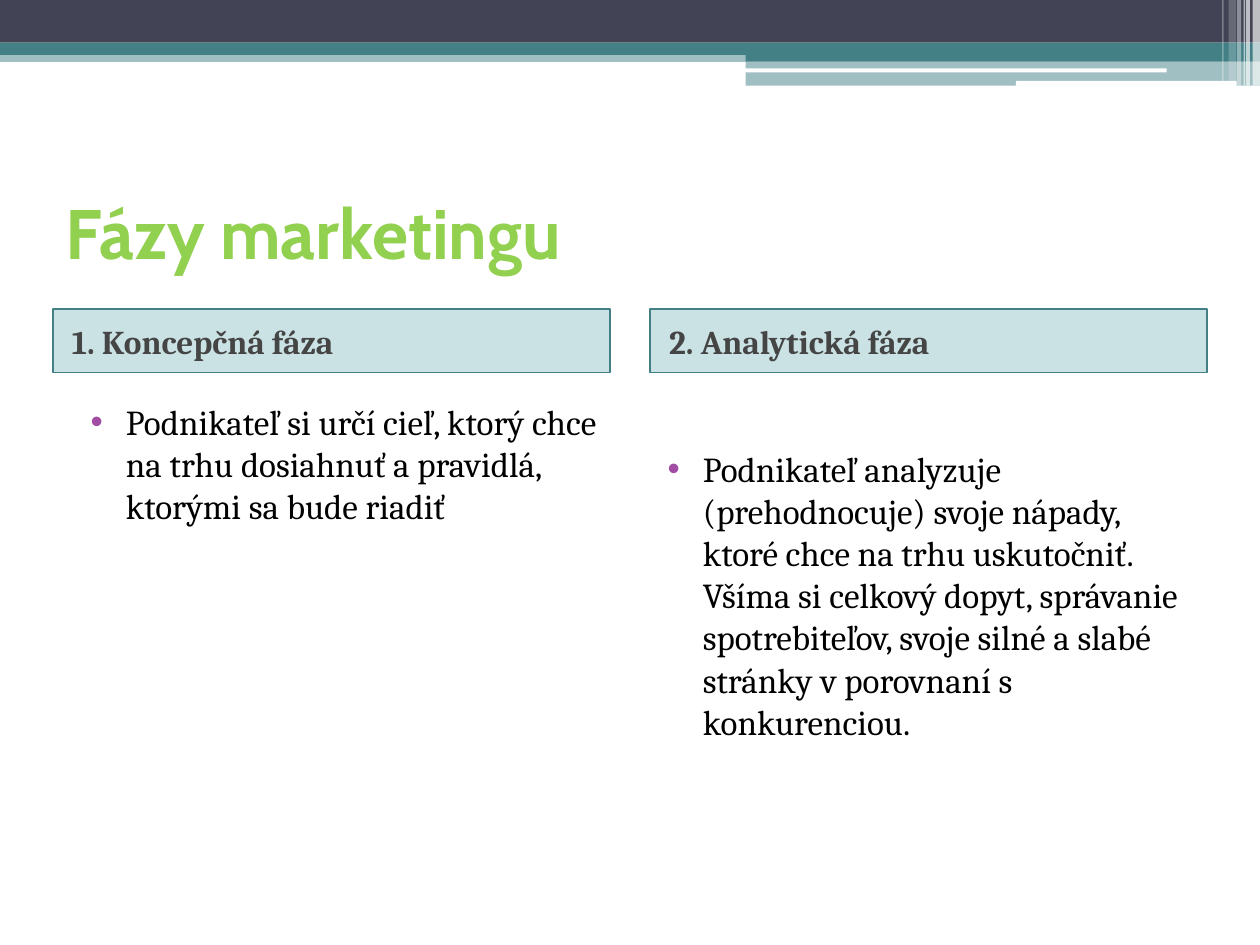
import pptx
import pptx.dml.color
import pptx.enum.shapes
import pptx.enum.text
import pptx.oxml
import pptx.oxml.ns
import pptx.util
from pptx.util import Cm, Pt

COLORS = {
    "navy": "424456", "teal": "438086", "white": "FFFFFF", "green": "92D050",
    "label": "328E97", "label_text": "454545", "black": "000000", "bullet": "A04DA3",
}
SHAPES = pptx.enum.shapes.MSO_SHAPE
ANCHORS = pptx.enum.text.MSO_ANCHOR

deck = pptx.Presentation()
deck.slide_width, deck.slide_height = Cm(25.4), Cm(19.05)
page = deck.slides.add_slide(deck.slide_layouts[6])


def add_block(kind, left, top, width, height, color, opacity=100):
    """Add a filled shape without outline; lengths in cm, opacity in percent."""
    block = page.shapes.add_shape(kind, Cm(left), Cm(top), Cm(width), Cm(height))
    block.shadow.inherit = False
    block.line.fill.background()
    block.fill.solid()
    block.fill.fore_color.rgb = pptx.dml.color.RGBColor.from_string(COLORS[color])
    if opacity < 100:
        fill_color = block.fill._xPr.find(".//" + pptx.oxml.ns.qn("a:srgbClr"))
        alpha = pptx.oxml.parse_xml(
            f'<a:alpha {pptx.oxml.ns.nsdecls("a")} val="{opacity * 1000}"/>')
        fill_color.append(alpha)
    return block


def write_text(box, text, font, size, color, bold=False, anchor=ANCHORS.MIDDLE):
    """Set the only paragraph of a box and return that paragraph."""
    frame = box.text_frame
    frame.text = text
    frame.word_wrap = True
    frame.vertical_anchor = anchor
    para = frame.paragraphs[0]
    para.alignment = pptx.enum.text.PP_ALIGN.LEFT
    span = para.runs[0]
    span.font.name, span.font.size, span.font.bold = font, Pt(size), bold
    span.font.color.rgb = pptx.dml.color.RGBColor.from_string(COLORS[color])
    return para


# Header bands
for left, top, width, height, color, opacity in [
    (0, 1.02, 25.4, 0.23, "teal", 50),
    (0, 0, 25.4, 0.86, "navy", 100),
    (0, 0.86, 25.4, 0.25, "teal", 100),
    (15.03, 0.99, 10.37, 0.24, "teal", 100),
    (15.03, 1.23, 10.37, 0.5, "teal", 50),
]:
    add_block(SHAPES.RECTANGLE, left, top, width, height, color, opacity)

for left, top, width, height in [(15.02, 1.38, 8.5, 0.08), (20.48, 1.63, 4.45, 0.1)]:
    add_block(SHAPES.ROUNDED_RECTANGLE, left, top, width, height, "white")

# Vertical stripes at the right edge
for left, width, height, opacity in [
    (25.25, 0.15, 1.73, 65),
    (25.12, 0.08, 1.73, 65),
    (25.07, 0.03, 1.73, 60),
    (24.94, 0.08, 1.73, 40),
    (24.77, 0.15, 1.63, 20),
    (24.64, 0.03, 1.63, 30),
]:
    add_block(SHAPES.RECTANGLE, left, 0, width, height, "white", opacity)

title = page.shapes.add_textbox(Cm(1.07), Cm(3.18), Cm(23.29), Cm(2.97))
write_text(title, "Fázy marketingu", "Cabin", 40, "green", bold=True)

# Two phases: label and description, with the description's top inset
COLUMN_WIDTH = 11.23
phases = [
    (1.07, "1. Koncepčná fáza", 1.27, 8.76, 2.03,
     "Podnikateľ si určí cieľ, ktorý chce na trhu dosiahnuť a pravidlá, "
     "ktorými sa bude riadiť"),
    (13.11, "2. Analytická fáza", 12.9, 10.9, 2.98,
     "Podnikateľ analyzuje (prehodnocuje) svoje nápady, ktoré chce na trhu "
     "uskutočniť. Všíma si celkový dopyt, správanie spotrebiteľov, svoje silné "
     "a slabé stránky v porovnaní s konkurenciou."),
]
for label_left, heading, body_left, body_height, inset, description in phases:
    label = add_block(SHAPES.RECTANGLE, label_left, 6.23, COLUMN_WIDTH, 1.28, "label", 25)
    label.line.color.rgb = pptx.dml.color.RGBColor.from_string(COLORS["teal"])
    label.line.width = Pt(1)
    para = write_text(label, heading, "Cambria", 19, "label_text", bold=True)
    para.space_before = Pt(3)
    para._p.get_or_add_pPr().set("marL", str(Cm(0.13)))

    body = page.shapes.add_textbox(Cm(body_left), Cm(6.05), Cm(COLUMN_WIDTH), Cm(body_height))
    body.text_frame.margin_top = Cm(inset)
    para = write_text(body, description, "Cambria", 20, "black", anchor=ANCHORS.TOP)
    para.space_before = Pt(3)
    properties = para._p.get_or_add_pPr()
    properties.set("marL", str(Cm(1.02)))
    properties.set("indent", str(Cm(-0.71)))
    for bullet_part in [
        '<a:buClr {}><a:srgbClr val="' + COLORS["bullet"] + '"/></a:buClr>',
        '<a:buFont {} typeface="Arial"/>',
        '<a:buChar {} char="•"/>',
    ]:
        properties.append(pptx.oxml.parse_xml(
            bullet_part.format(pptx.oxml.ns.nsdecls("a"))))

deck.save("out.pptx")
